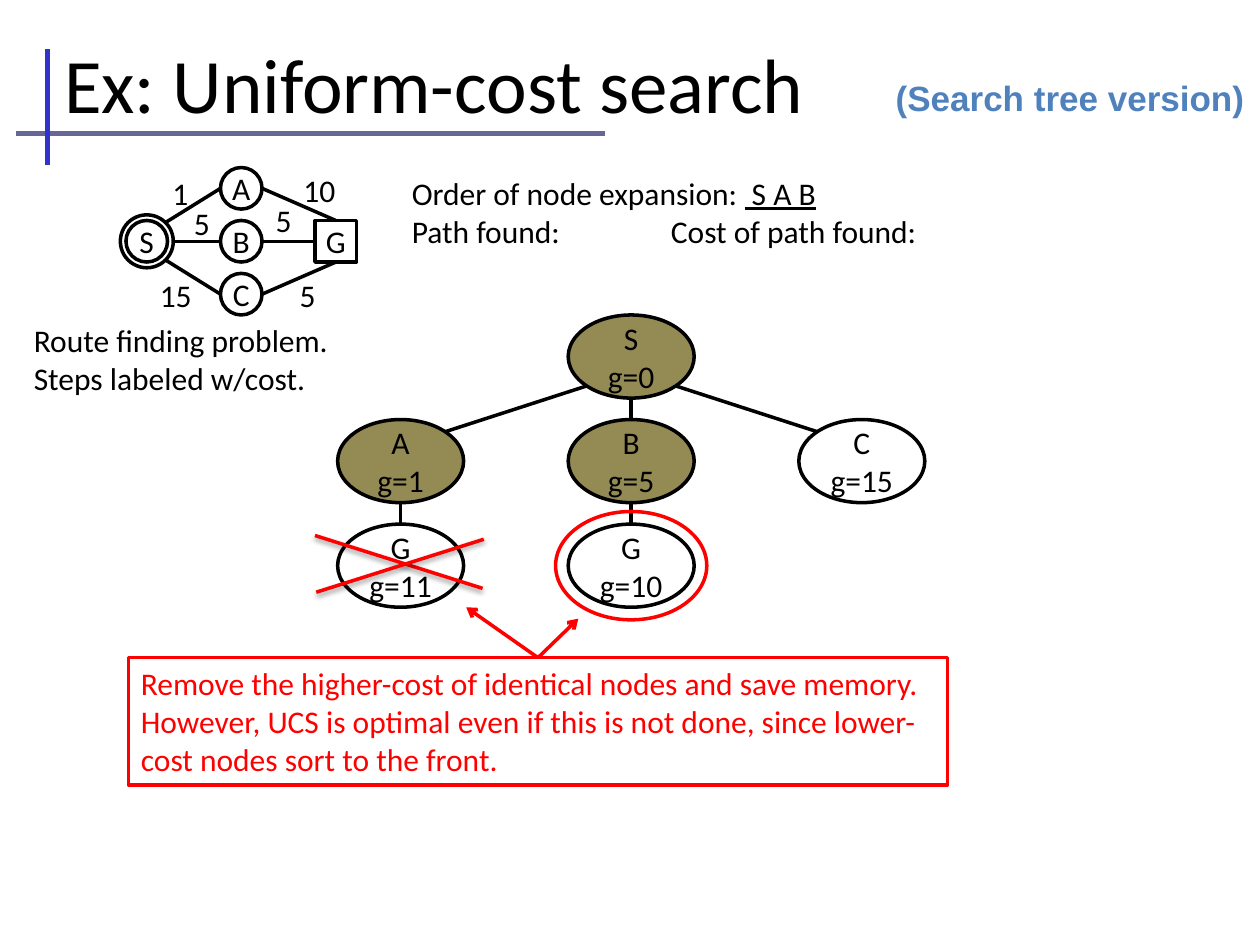
from math import sqrt
from lxml import etree
from pptx import Presentation
from pptx import util as u
from pptx.dml.color import RGBColor
from pptx.enum import shapes, text
from pptx.oxml import ns

C = {"ink": "000000", "red": "FF0000", "olive": "948A54", "blue": "4F81BD",
     "rule": "666699", "bar": "3333CC"}
BODY = {"size": u.Pt(18), "name": "Calibri"}
TITLE = {"size": u.Pt(44), "name": "Calibri"}
TAG = {"size": u.Pt(20), "name": "Arial", "bold": True}
TIGHT = dict.fromkeys(("margin_left", "margin_right", "margin_top", "margin_bottom"), 0)
OVAL, RECT = shapes.MSO_SHAPE.OVAL, shapes.MSO_SHAPE.RECTANGLE

RULES = [((0.13, 1.06), (4.8, 1.06), "rule"), ((0.38, 1.31), (0.38, 0.39), "bar")]
TEXTS = [
    ((0.41, 0.1, 8.92, 1.12), ["Ex: Uniform-cost search"], TITLE, "ink"),
    ((7.01, 0.56, 2.99, 0.44), ["(Search tree version)"], TAG, "blue"),
    ((3.17, 1.33, 6.5, 0.71),
     ["Order of node expansion: | S A B", "Path found: \t\t Cost of path found:"], BODY, "ink"),
    ((0.17, 2.5, 2.77, 0.71), ["Route finding problem. Steps labeled w/cost."], BODY, "ink"),
]
COSTS = [("10", 2.31, 1.31), ("1", 1.27, 1.33), ("5", 1.44, 1.57),
         ("15", 1.17, 2.14), ("5", 2.09, 1.55), ("5", 2.28, 2.14)]
GRAPH = {"S": (0, 1), "A": (1, 0), "B": (1, 1), "C": (1, 2), "G": (2, 1)}
ROUTES = [("A", -1, 0), ("B", 0, 1), ("C", 1, 2)]
TREE = [("S", 0, 1, 0, True), ("A", 1, 0, 1, True), ("B", 5, 1, 1, True),
        ("C", 15, 2, 1, False), ("G", 11, 0, 2, False), ("G", 10, 1, 2, False)]
BRANCHES = [((1, 0), -1, (0, 1)), ((1, 0), 0, (1, 1)), ((1, 0), 1, (2, 1)),
            ((0, 1), 0, (0, 2)), ((1, 1), 0, (1, 2))]
NOTE = ("Remove the higher-cost of identical nodes and save memory. However, UCS is "
        "optimal even if this is not done, since lower-cost nodes sort to the front.")
CROSS = [((2.5, 4.25), (3.83, 4.67)), ((2.51, 4.7), (3.84, 4.28))]

prs = Presentation()
prs.slide_width, prs.slide_height = u.Inches(10), u.Inches(7.5)
s = prs.slides.add_slide(prs.slide_layouts[6])


def rgb(key):
    return RGBColor.from_string(C[key])


def setup(obj, values):
    for key, value in values.items():
        setattr(obj, key, value)


def write(sp, paras, fmt, color="ink", align=None, **frame):
    tf = sp.text_frame
    setup(tf, {"word_wrap": True, **frame})
    for i, para in enumerate(paras):
        p = tf.paragraphs[0] if i == 0 else tf.add_paragraph()
        p.alignment = align
        for j, part in enumerate(para.split("|")):
            r = p.add_run()
            r.text = part
            setup(r.font, fmt)
            r.font.color.rgb = rgb(color)
            if j:
                r.font.underline = True


def label(box, paras, fmt, color="ink", **frame):
    write(s.shapes.add_textbox(*map(u.Inches, box)), paras, fmt, color, **frame)


def shape(kind, box, color="ink", fill=None):
    sp = s.shapes.add_shape(kind, *map(u.Inches, box))
    sp.shadow.inherit = False
    if fill:
        sp.fill.solid()
        sp.fill.fore_color.rgb = rgb(fill)
    else:
        sp.fill.background()
    sp.line.color.rgb, sp.line.width = rgb(color), u.Pt(2)
    return sp


def node(kind, box, paras, fill=None):
    sp = shape(kind, box, fill=fill)
    write(sp, paras, BODY, align=text.PP_ALIGN.CENTER,
          vertical_anchor=text.MSO_ANCHOR.MIDDLE, **TIGHT)
    return sp


def line(a, b, color="ink", width=2, arrow=False, shadow=False):
    ln = s.shapes.add_connector(shapes.MSO_CONNECTOR.STRAIGHT, *map(u.Inches, (*a, *b)))
    ln.line.color.rgb, ln.line.width = rgb(color), u.Pt(width)
    if arrow:
        etree.SubElement(ln.line._get_or_add_ln(), ns.qn("a:tailEnd"), type="arrow")
    fx = etree.SubElement(ln._element.spPr, ns.qn("a:effectLst"))
    if shadow:
        sh = etree.SubElement(fx, ns.qn("a:outerShdw"), blurRad=str(u.Pt(3.1)),
                              dist=str(u.Pt(1.6)), dir="5400000", rotWithShape="0")
        tint = etree.SubElement(sh, ns.qn("a:srgbClr"), val=C["ink"])
        etree.SubElement(tint, ns.qn("a:alpha"), val="38000")
    return ln


def rim(box, dx, dy):
    x, y, w, h = box
    k = sqrt(0.5) if dx and dy else 1
    return x + w / 2 * (1 + k * dx), y + h / 2 * (1 + k * dy)


def graph_box(col, row):
    return 1 + 0.75 * col, 1.33 + 0.42 * row, 0.33, 0.33


def tree_box(col, row):
    return 2.68 + 1.83 * col, 2.5 + 0.83 * row, 1, 0.66


def grow(box, dx, dy):
    x, y, w, h = box
    return x - dx, y - dy, w + 2 * dx, h + 2 * dy


for a, b, color in RULES:
    line(a, b, color, 3)
for box, paras, fmt, color in TEXTS:
    anchor = text.MSO_ANCHOR.MIDDLE if fmt is TITLE else text.MSO_ANCHOR.TOP
    label(box, paras, fmt, color, vertical_anchor=anchor, word_wrap=fmt is not TAG)
for cost, x, y in COSTS:
    label((x, y, 0.33 if len(cost) == 1 else 0.6, 0.4), [cost], BODY)

nodes = {name: node(RECT if name == "G" else OVAL, graph_box(*cell), [name])
         for name, cell in GRAPH.items()}
start = grow(graph_box(*GRAPH["S"]), 0.045, 0.045)
shape(OVAL, start)
for name, dy, site in ROUTES:
    box = graph_box(*GRAPH[name])
    line(rim(start, 1, dy), rim(box, -1, 0))
    right = rim(box, 1, 0)
    line(right, right).end_connect(nodes["G"], site)

for name, g, col, row, visited in TREE:
    node(OVAL, tree_box(col, row), [name, f"g={g}"], "olive" if visited else None)
for parent, dx, child in BRANCHES:
    line(rim(tree_box(*parent), dx, 1), rim(tree_box(*child), -dx, -1))
shape(OVAL, grow(tree_box(1, 2), 0.1, 0.1), "red")

note = shape(RECT, (1.02, 5.22, 6.5, 1.01), "red")
write(note, [NOTE], BODY, "red", text.PP_ALIGN.LEFT, vertical_anchor=text.MSO_ANCHOR.TOP)
for tip in [(4.59, 4.91), (3.7, 4.82)]:
    line(tip, tip, "red", arrow=True).begin_connect(note, 0)
for a, b in CROSS:
    line(a, b, "red", shadow=True)

prs.save("out.pptx")
